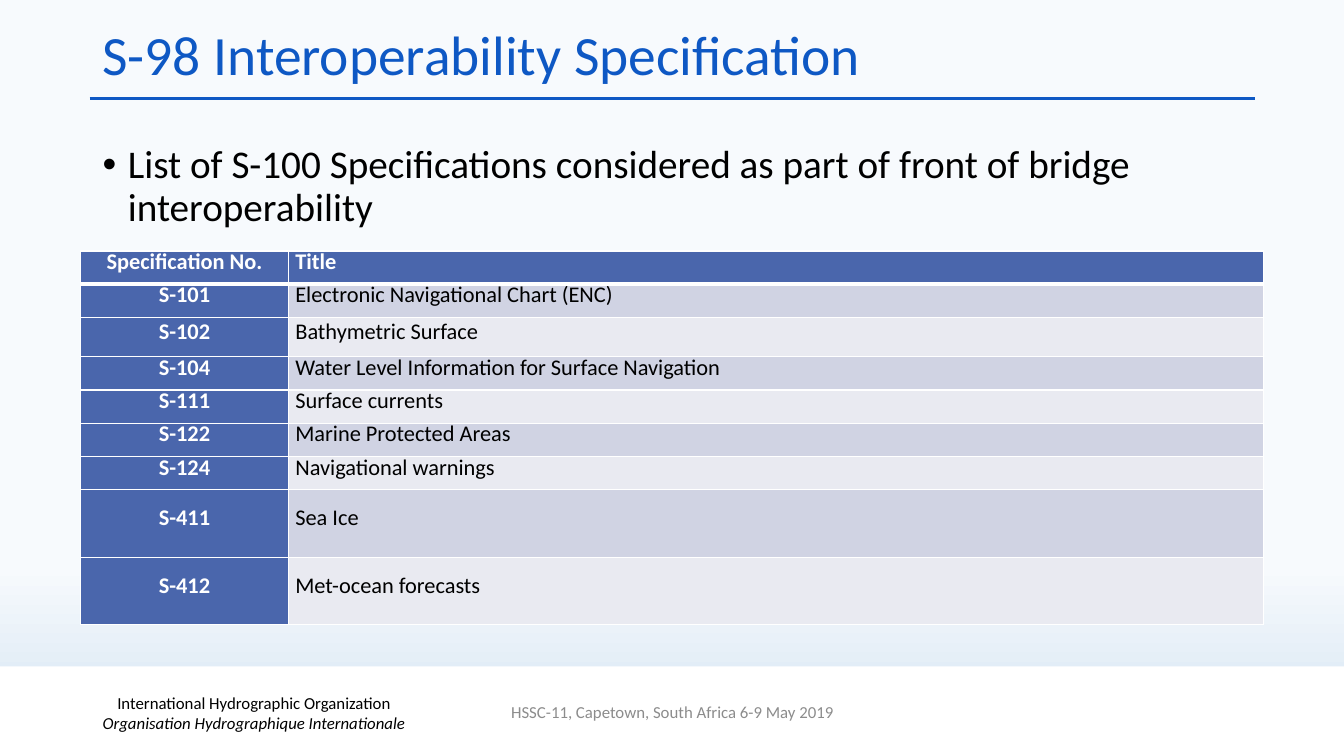
from pptx import Presentation
from pptx import util as u
from pptx.dml.color import RGBColor
from pptx.enum import shapes, text
from pptx.oxml import parse_xml
from pptx.oxml.ns import nsdecls, qn
from lxml import etree

BLUE, HEAD, WHITE, BLACK = "0E58C4", "4A66AC", "FFFFFF", "000000"
BANDS = ["D0D3E3", "E9EAF1"]
LEFT, MID = text.PP_ALIGN.LEFT, text.PP_ALIGN.CENTER
SPECS = [
    ("Specification No.", "Title", 0.33),
    ("S-101", "Electronic Navigational Chart (ENC)", 0.33),
    ("S-102", "Bathymetric Surface", 0.39),
    ("S-104", "Water Level Information for Surface Navigation", 0.33),
    ("S-111", "Surface currents", 0.33),
    ("S-122", "Marine Protected Areas", 0.33),
    ("S-124", "Navigational warnings", 0.33),
    ("S-411", "Sea Ice", 0.67),
    ("S-412", "Met-ocean forecasts", 0.67),
]


def color(code):
    return RGBColor.from_string(code)


def style(para, size, code, align=LEFT, bold=False, space=None):
    para.alignment = align
    para.line_spacing = space
    for run in para.runs:
        font = run.font
        font.name, font.size, font.bold = "Calibri", u.Pt(size), bold
        font.color.rgb = color(code)


def add_text(slide, box, words, size, code, align=LEFT, space=None,
             anchor=text.MSO_ANCHOR.MIDDLE):
    frame = slide.shapes.add_textbox(*map(u.Inches, box)).text_frame
    frame.word_wrap = True
    frame.vertical_anchor = anchor
    para = frame.paragraphs[0]
    para.text = words
    style(para, size, code, align, space=space)
    return para


def add_bullet(para):
    props = para._p.get_or_add_pPr()
    props.set("marL", str(u.Inches(0.25)))
    props.set("indent", str(-u.Inches(0.25)))
    props.append(parse_xml(f'<a:buFont {nsdecls("a")} typeface="Arial"/>'))
    props.append(parse_xml(f'<a:buChar {nsdecls("a")} char="•"/>'))


def add_rule(slide, left, right, top):
    line = slide.shapes.add_connector(
        shapes.MSO_CONNECTOR.STRAIGHT,
        *map(u.Inches, (left, top, right, top)))
    line.line.color.rgb = color(BLUE)
    line.line.width = u.Pt(2.25)
    etree.SubElement(line._element.spPr, qn("a:effectLst"))


def add_band(slide, box, code):
    band = slide.shapes.add_shape(
        shapes.MSO_SHAPE.RECTANGLE, *map(u.Inches, box))
    band.shadow.inherit = False
    band.fill.solid()
    band.fill.fore_color.rgb = color(code)
    band.line.fill.background()


def set_edges(cell, head, body):
    # Borders come before the fill in the cell properties
    props = cell._tc.get_or_add_tcPr()
    for spot, side in enumerate("LRTB"):
        thick = 3 if (head and side == "B") or (body and side == "T") else 1
        props.insert(spot, parse_xml(
            f'<a:ln{side} {nsdecls("a")} w="{u.Pt(thick)}"><a:solidFill>'
            f'<a:srgbClr val="{WHITE}"/></a:solidFill></a:ln{side}>'))


def fill_cell(cell, words, row, col):
    strong = row == 0 or col == 0
    cell.fill.solid()
    cell.fill.fore_color.rgb = color(HEAD if strong else BANDS[(row - 1) % 2])
    cell.margin_left = cell.margin_right = u.Inches(0.07)
    cell.margin_top = cell.margin_bottom = 0
    cell.vertical_anchor = text.MSO_ANCHOR.MIDDLE
    para = cell.text_frame.paragraphs[0]
    para.text = words
    style(para, 16, WHITE if strong else BLACK,
          LEFT if col else MID, strong, u.Pt(11.5))
    set_edges(cell, row == 0, row == 1)


def add_specs(slide, box):
    table = slide.shapes.add_table(
        len(SPECS), 2, *map(u.Inches, box)).table
    for col, width in zip(table.columns, (2.06, 9.67)):
        col.width = u.Inches(width)
    for row, (code, title, high) in enumerate(SPECS):
        table.rows[row].height = u.Inches(high)
        for col, words in enumerate((code, title)):
            fill_cell(table.cell(row, col), words, row, col)


def set_back(slide):
    fill = slide.background.fill
    fill.gradient()
    fill.gradient_angle = 270
    stops = ((0.75, "F7FAFD"), (1, "D0E2F1"))
    for stop, (spot, code) in zip(fill.gradient_stops, stops):
        stop.position = spot
        stop.color.rgb = color(code)


def main():
    deck = Presentation()
    deck.slide_width, deck.slide_height = u.Inches(13.33), u.Inches(7.5)
    slide = deck.slides.add_slide(deck.slide_layouts[6])

    # Backdrop, title rule and footer band
    set_back(slide)
    add_rule(slide, 0.89, 12.45, 0.98)
    add_band(slide, (0, 6.61, 13.33, 0.89), WHITE)
    owner = add_text(
        slide, (0.27, 6.87, 4.5, 0.4),
        "International Hydrographic Organization\v"
        "Organisation Hydrographique Internationale", 12, BLACK, MID)
    owner.runs[1].font.italic = True

    # Title and lead point
    add_text(slide, (0.92, 0.28, 11.5, 0.59),
             "S-98 Interoperability Specification", 39.6, BLUE, space=0.9)
    lead = add_text(
        slide, (0.92, 1.39, 11.5, 1),
        "List of S-100 Specifications considered as part of front of bridge "
        "interoperability", 28, BLACK, space=0.9, anchor=text.MSO_ANCHOR.TOP)
    add_bullet(lead)

    # Specification table and event footer
    add_specs(slide, (0.8, 2.49, 11.73, 3.71))
    add_text(slide, (4.42, 6.86, 4.5, 0.4),
             "HSSC-11, Capetown, South Africa 6-9 May 2019", 12, "8C8C8C", MID)
    deck.save("out.pptx")


if __name__ == "__main__":
    main()
